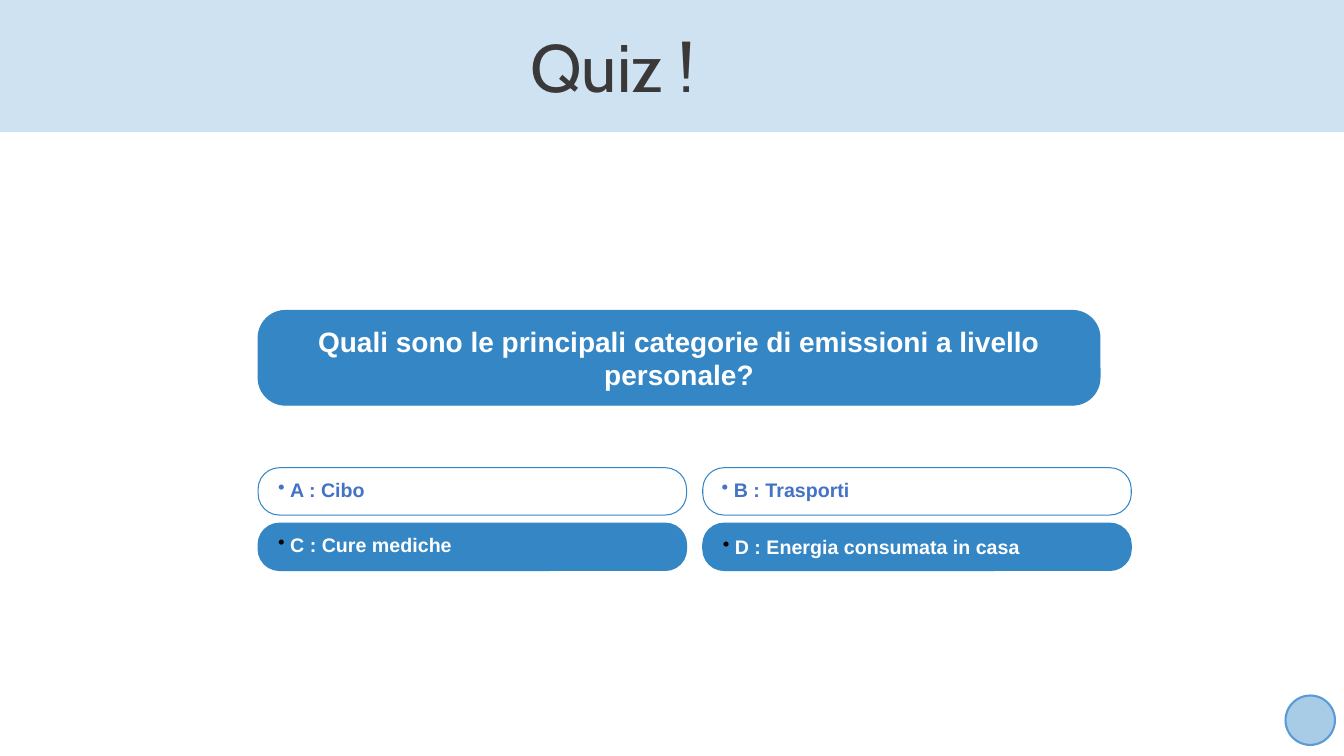
from lxml import etree
from pptx import Presentation
from pptx.dml.color import RGBColor
from pptx.enum.shapes import MSO_SHAPE
from pptx.enum.text import MSO_ANCHOR, PP_ALIGN
from pptx.oxml.ns import qn
from pptx.util import Inches, Pt

WHITE = RGBColor(0xFF, 0xFF, 0xFF)
BLACK = RGBColor(0x00, 0x00, 0x00)
CHARCOAL = RGBColor(0x3A, 0x38, 0x38)
BLUE = RGBColor(0x34, 0x86, 0xC5)
PALE_BLUE = RGBColor(0xCE, 0xE2, 0xF1)
TEXT_BLUE = RGBColor(0x44, 0x72, 0xC4)
RING_BLUE = RGBColor(0x5B, 0x9B, 0xD5)


def add_bullet(paragraph, color, indent=0.12):
    properties = paragraph._p.get_or_add_pPr()
    properties.set("marL", str(Inches(indent)))
    properties.set("indent", str(-Inches(indent)))
    bullet_color = etree.SubElement(properties, qn("a:buClr"))
    etree.SubElement(bullet_color, qn("a:srgbClr"), val=str(color))
    etree.SubElement(properties, qn("a:buChar"), char="•")


def write_text(shape, text, *, size, color, font="Arial", bold=False,
               align=PP_ALIGN.LEFT, anchor=MSO_ANCHOR.TOP, bullet=None):
    frame = shape.text_frame
    frame.word_wrap = True
    frame.vertical_anchor = anchor
    paragraph = frame.paragraphs[0]
    paragraph.alignment = align
    if bullet is not None:
        add_bullet(paragraph, bullet)
    paragraph.font.size = Pt(size)
    run = paragraph.add_run()
    run.text = text
    run.font.name = font
    run.font.size = Pt(size)
    run.font.bold = bold
    run.font.color.rgb = color


class QuizSlide:
    def __init__(self, presentation):
        self.shapes = presentation.slides.add_slide(presentation.slide_layouts[6]).shapes

    def block(self, kind, left, top, width, height, fill, corner=None,
              line=None, weight=0.75, opacity=None):
        shape = self.shapes.add_shape(kind, Inches(left), Inches(top),
                                      Inches(width), Inches(height))
        shape.shadow.inherit = False
        if corner is not None:
            shape.adjustments[0] = corner
        shape.fill.solid()
        shape.fill.fore_color.rgb = fill
        if opacity is not None:
            fill_color = shape._element.spPr.find(qn("a:solidFill"))[0]
            etree.SubElement(fill_color, qn("a:alpha"), val=str(opacity * 1000))
        if line is None:
            shape.line.fill.background()
        else:
            shape.line.color.rgb = line
            shape.line.width = Pt(weight)
        return shape

    def text(self, left, top, width, height, text, **text_format):
        box = self.shapes.add_textbox(Inches(left), Inches(top),
                                      Inches(width), Inches(height))
        write_text(box, text, **text_format)


def main():
    presentation = Presentation()
    presentation.slide_width = Inches(13.33)
    presentation.slide_height = Inches(7.5)
    slide = QuizSlide(presentation)

    # Title band
    slide.block(MSO_SHAPE.RECTANGLE, 0, 0, 13.33, 1.31, PALE_BLUE)
    slide.text(1.07, 0.12, 10.01, 1.07, "Quiz !", size=48, color=CHARCOAL, font="Cabin",
               align=PP_ALIGN.CENTER, anchor=MSO_ANCHOR.MIDDLE)

    # Answer panels: white upper row, blue lower row
    for left in (2.56, 6.97):
        for top, fill in ((4.64, WHITE), (5.19, BLUE)):
            slide.block(MSO_SHAPE.ROUNDED_RECTANGLE, left, top, 4.25, 0.47, fill,
                        corner=0.45, line=BLUE)

    # Question
    question = slide.block(MSO_SHAPE.ROUNDED_RECTANGLE, 2.56, 3.08, 8.35, 0.94, BLUE,
                           corner=0.29, line=BLUE)
    write_text(question, "Quali sono le principali categorie di emissioni a livello personale?",
               size=20, color=WHITE, bold=True, align=PP_ALIGN.CENTER,
               anchor=MSO_ANCHOR.MIDDLE)

    # Answers
    answers = [
        (2.66, 4.69, 4.17, "A : Cibo", TEXT_BLUE, TEXT_BLUE),
        (7.06, 4.69, 4.08, "B : Trasporti", TEXT_BLUE, TEXT_BLUE),
        (2.66, 5.24, 4.08, "C : Cure mediche", WHITE, BLACK),
        (7.07, 5.26, 3.35, "D : Energia consumata in casa", WHITE, BLACK),
    ]
    for left, top, width, answer, color, bullet in answers:
        slide.text(left, top, width, 0.4, answer, size=14, color=color, bold=True,
                   bullet=bullet)

    # Corner circle
    slide.block(MSO_SHAPE.OVAL, 12.75, 6.9, 0.49, 0.49, BLUE,
                line=RING_BLUE, weight=1.5, opacity=42)

    presentation.save("out.pptx")


if __name__ == "__main__":
    main()
